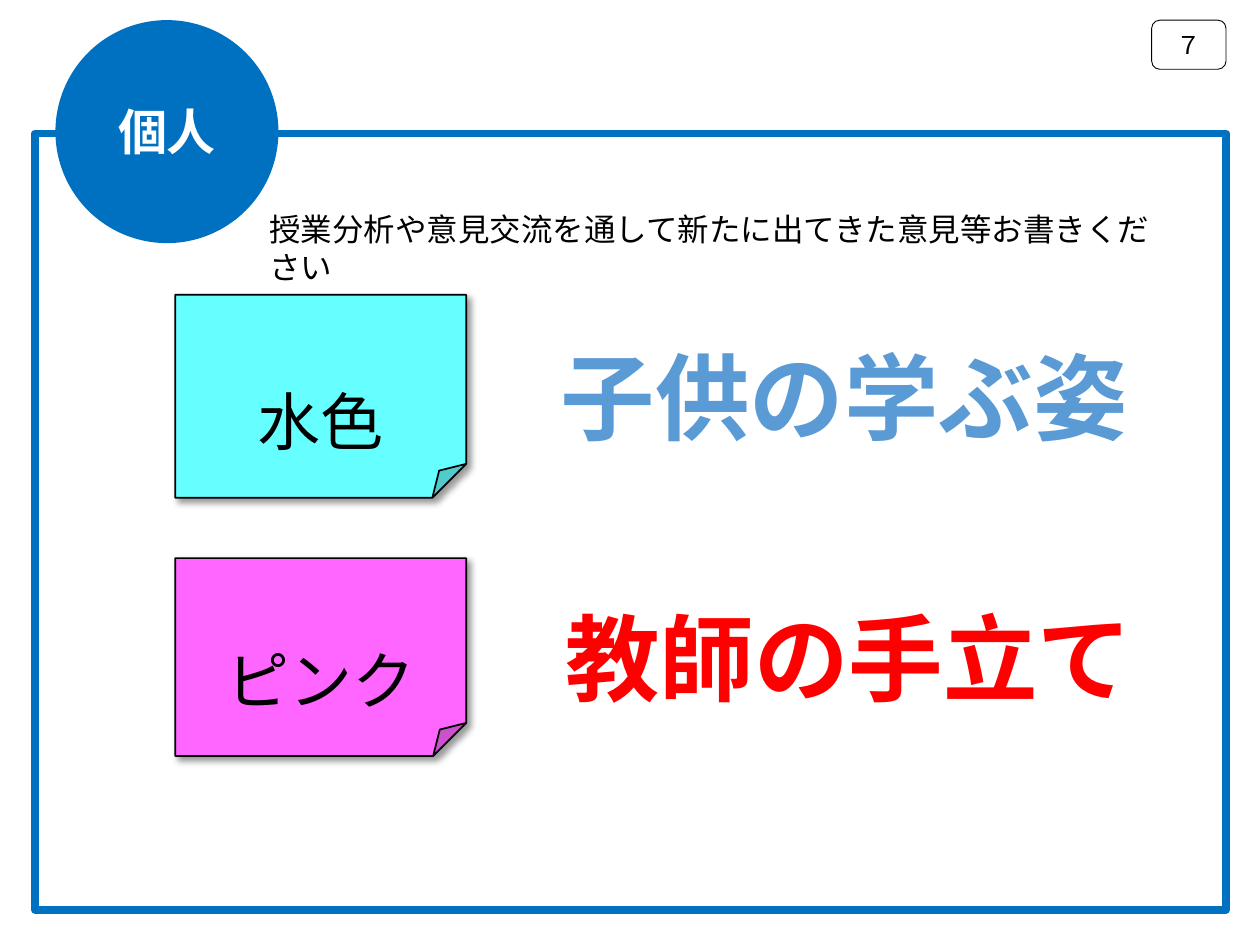
from lxml import etree
from pptx import Presentation
from pptx.dml.color import RGBColor
from pptx.enum.shapes import MSO_SHAPE as SHAPE
from pptx.enum.text import MSO_ANCHOR as ANCHOR, PP_ALIGN as ALIGN
from pptx.oxml import parse_xml
from pptx.oxml.ns import nsdecls, qn
from pptx.util import Inches, Pt

BLACK = RGBColor(0x00, 0x00, 0x00)
WHITE = RGBColor(0xFF, 0xFF, 0xFF)
BLUE = RGBColor(0x00, 0x70, 0xC0)
LIGHT_BLUE = RGBColor(0x5B, 0x9B, 0xD5)
RED = RGBColor(0xFF, 0x00, 0x00)
PINK = RGBColor(0xFF, 0x66, 0xFF)
AQUA = RGBColor(0x66, 0xFF, 0xFF)
GOTHIC = "Noto Sans CJK JP"
LATIN = "Calibri"
SHADOW = (
    f'<a:effectLst {nsdecls("a")}><a:outerShdw blurRad="{Pt(4)}" dist="{Pt(3)}" '
    'dir="2700000" algn="tl" rotWithShape="0"><a:srgbClr val="000000">'
    '<a:alpha val="40000"/></a:srgbClr></a:outerShdw></a:effectLst>'
)

presentation = Presentation()
presentation.slide_width = Inches(10)
presentation.slide_height = Inches(7.5)
slide = presentation.slides.add_slide(presentation.slide_layouts[6])


def add_shape(kind, box, fill=None, line=None, width=1):
    shape = slide.shapes.add_shape(kind, *map(Inches, box))
    shape.shadow.inherit = False
    if fill is None:
        shape.fill.background()
    else:
        shape.fill.solid()
        shape.fill.fore_color.rgb = fill
    if line is None:
        shape.line.fill.background()
    else:
        shape.line.color.rgb = line
        shape.line.width = Pt(width)
    return shape


def write(shape, text, size, color, font=GOTHIC, bold=False, align=ALIGN.CENTER,
          anchor=ANCHOR.TOP, wrap=True, shadow=False):
    frame = shape.text_frame
    frame.word_wrap = wrap
    frame.vertical_anchor = anchor
    paragraph = frame.paragraphs[0]
    paragraph.alignment = align
    run = paragraph.add_run()
    run.text = text
    run.font.size = Pt(size)
    run.font.bold = bold
    run.font.color.rgb = color
    run.font.name = font
    properties = run.font._element
    etree.SubElement(properties, qn("a:ea")).set("typeface", GOTHIC)
    if shadow:
        properties.find(qn("a:solidFill")).addnext(parse_xml(SHADOW))


notes = [
    ("ピンク", (1.39, 4.43, 2.31, 1.57), PINK),
    ("水色", (1.39, 2.34, 2.31, 1.61), AQUA),
]
for text, box, fill in notes:
    note = add_shape(SHAPE.FOLDED_CORNER, box, fill, BLACK)
    properties = note._element.spPr
    properties.replace(properties.find(qn("a:effectLst")), parse_xml(SHADOW))
    write(note, text, 36, BLACK, anchor=ANCHOR.BOTTOM)

headings = [
    ("子供の学ぶ姿", (4.35, 2.64, 4.79, 1.01), LIGHT_BLUE, ALIGN.LEFT),
    ("教師の手立て", (4.35, 4.71, 4.77, 1.01), RED, ALIGN.CENTER),
]
for text, box, color, align in headings:
    heading = slide.shapes.add_textbox(*map(Inches, box))
    write(heading, text, 54, color, LATIN, bold=True, align=align, shadow=True)

instruction = slide.shapes.add_textbox(*map(Inches, (2.04, 1.62, 7.33, 0.4)))
write(instruction, "授業分析や意見交流を通して新たに出てきた意見等お書きください",
      18, BLACK, LATIN, align=ALIGN.LEFT)

page_number = add_shape(SHAPE.ROUNDED_RECTANGLE, (9.14, 0.16, 0.59, 0.39), WHITE, BLACK, 0.5)
write(page_number, "７", 14, BLACK, anchor=ANCHOR.MIDDLE)

add_shape(SHAPE.RECTANGLE, (0.28, 1.06, 9.45, 6.16), line=BLUE, width=4.5)
add_shape(SHAPE.OVAL, (0.44, 0.16, 1.77, 1.77), BLUE)
label = slide.shapes.add_textbox(*map(Inches, (0.83, 0.76, 0.99, 0.57)))
write(label, "個人", 28, WHITE, bold=True, wrap=False)

presentation.save("out.pptx")
